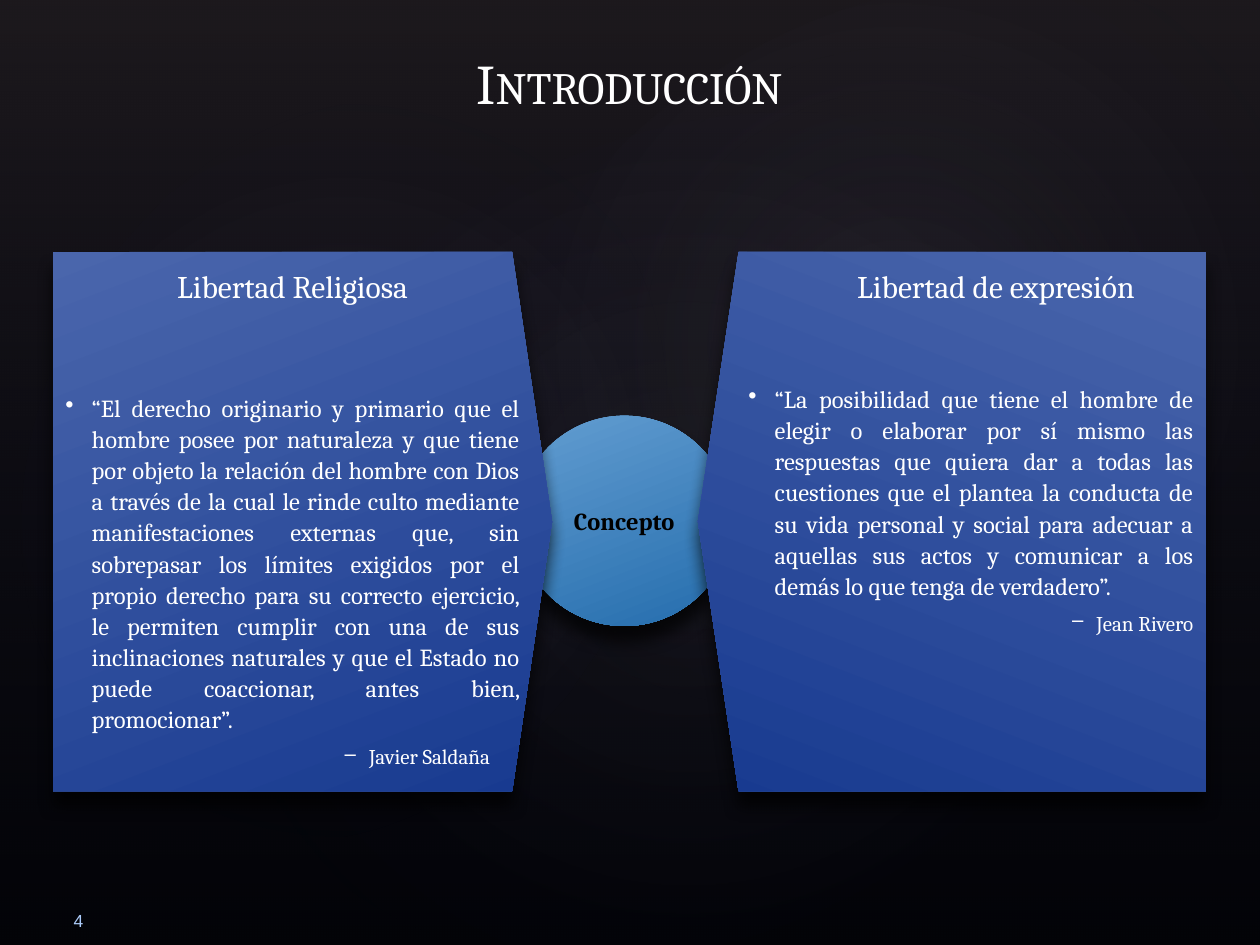
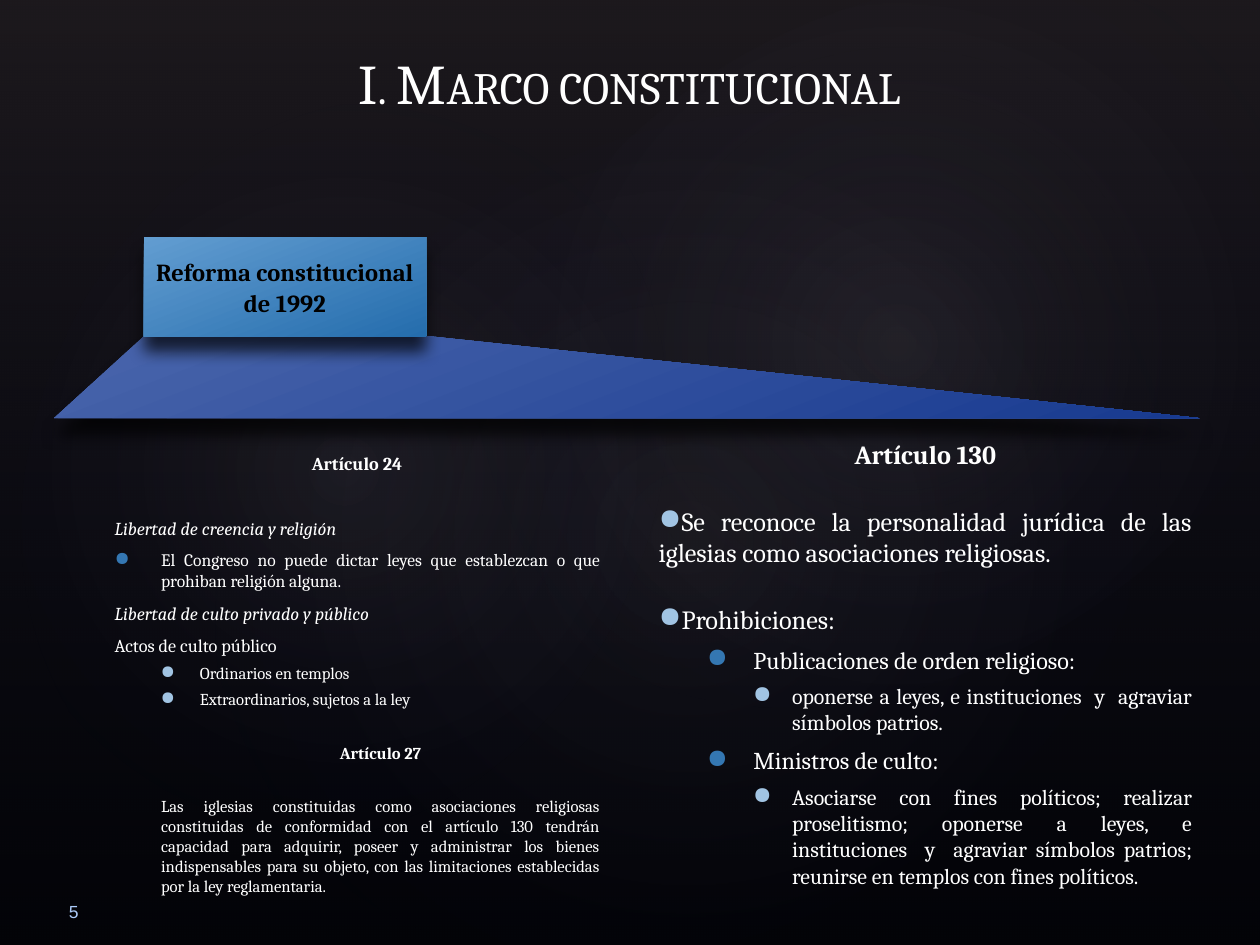
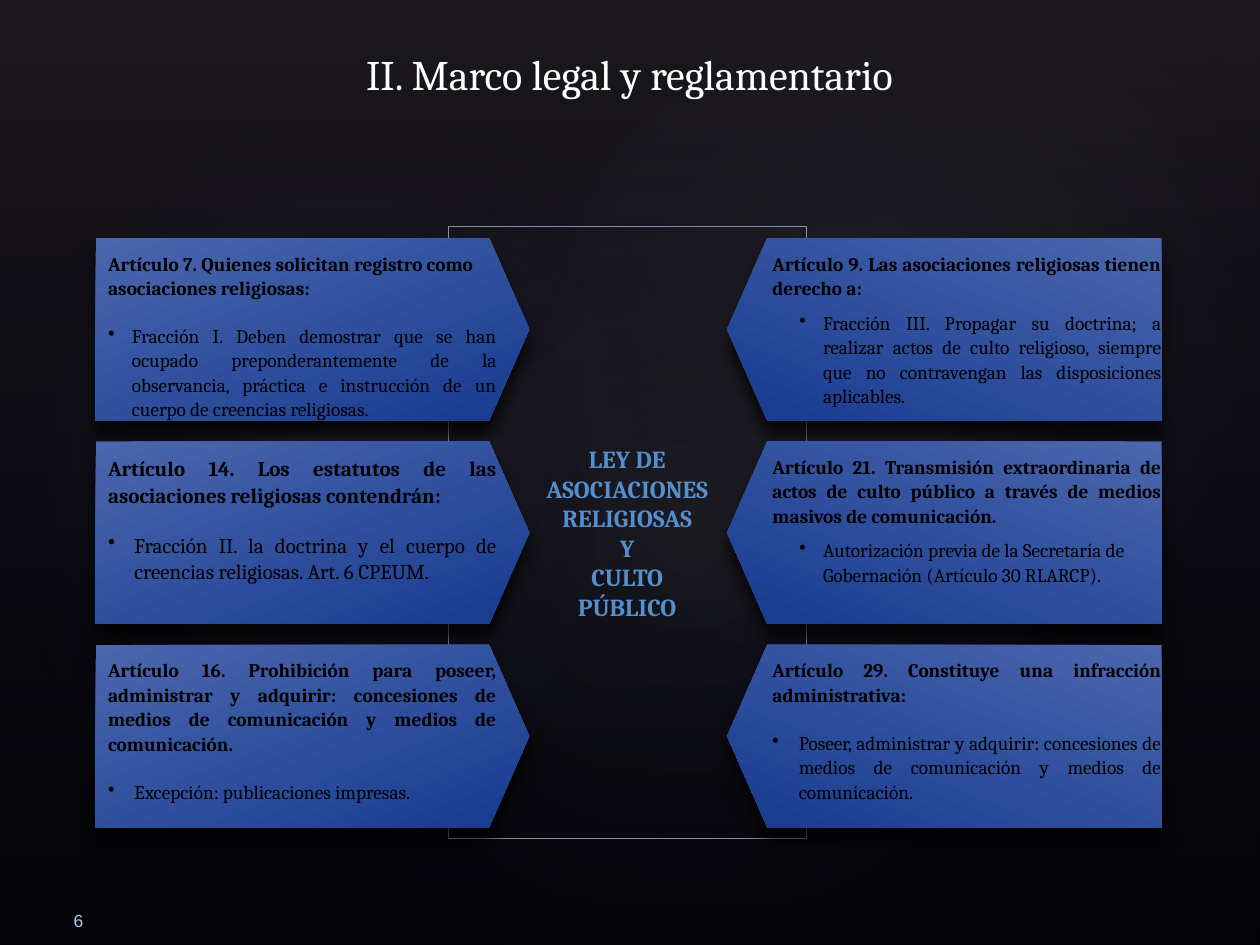
from pptx import Presentation
from pptx.dml.color import RGBColor
from pptx.enum.shapes import MSO_SHAPE
from pptx.enum.text import MSO_ANCHOR, PP_ALIGN
from pptx.oxml import parse_xml
from pptx.oxml.ns import nsdecls, qn
from pptx.util import Cm, Pt

# Shared colours, as hex strings
BLACK, WHITE = "000000", "FFFFFF"
PALE, MID, SKY = "A1C4E3", "3477B2", "548FCB"
NAVY = [(0, "4A66AC", 100), (100, "183A90", 100)]
BLUE = [(0, "629DD1", 100), (100, "256DAD", 100)]
VEIL = [(0, "504652", 36), (100, "242852", 10)]

ALIGN = {"l": PP_ALIGN.LEFT, "c": PP_ALIGN.CENTER,
         "r": PP_ALIGN.RIGHT, "j": PP_ALIGN.JUSTIFY}
TOP, MIDDLE, BOTTOM = MSO_ANCHOR.TOP, MSO_ANCHOR.MIDDLE, MSO_ANCHOR.BOTTOM

# Background glows: place, turn, opacity at the centre
GLOWS = [((3.81, 2.9, 20.12, 15.85), 328.7, 7),
         ((-0.76, 3.25, 15.39, 12.45), 294.3, 8),
         ((9.09, 0.33, 18.01, 13.21), 328.7, 8)]


def color(text):
    return RGBColor.from_string(text)


# Fill and shadow
def blend(shape, stops, angle=None):
    """Gradient fill: linear with an angle, round without one."""
    marks = "".join(
        f'<a:gs pos="{pos * 1000}"><a:srgbClr val="{tone}">'
        f'<a:alpha val="{alpha * 1000}"/></a:srgbClr></a:gs>'
        for pos, tone, alpha in stops)
    if angle is None:
        way = ('<a:path path="circle"><a:fillToRect l="50000" t="50000" '
               'r="50000" b="50000"/></a:path>')
    else:
        way = f'<a:lin ang="{angle * 60000}" scaled="0"/>'
    shape.fill.solid()
    props = shape.element.spPr
    props.replace(props.find(qn("a:solidFill")), parse_xml(
        f'<a:gradFill {nsdecls("a")} rotWithShape="1">'
        f'<a:gsLst>{marks}</a:gsLst>{way}</a:gradFill>'))


def plain(shape):
    shape.shadow.inherit = False
    shape.line.fill.background()
    return shape


def raised(shape, stops):
    """Slanted gradient with a soft shadow below."""
    plain(shape)
    blend(shape, stops, 69)
    shape.element.spPr.find(qn("a:effectLst")).append(parse_xml(
        f'<a:outerShdw {nsdecls("a")} blurRad="{Pt(9)}" dist="{Pt(9)}" '
        f'dir="5400000" rotWithShape="0"><a:srgbClr val="{BLACK}">'
        '<a:alpha val="70000"/></a:srgbClr></a:outerShdw>'))
    return shape


def draw(slide, kind, box):
    return slide.shapes.add_shape(kind, *map(Cm, box))


# Text
def style(para, size, tone=WHITE, bold=False, italic=False, align="l",
          before=0, line=None, left=0, hang=0, level=0, bullet=None,
          dot=None, font="Cambria", small=False):
    para.alignment = ALIGN[align]
    para.level = level
    para.space_before = Pt(before)
    if line:
        para.line_spacing = line
    props = para._p.get_or_add_pPr()
    props.set("marL", str(Cm(left)))
    props.set("indent", str(Cm(-hang)))
    if dot:
        props.append(parse_xml(f'<a:buClr {nsdecls("a")}>'
                               f'<a:srgbClr val="{dot}"/></a:buClr>'))
        props.append(parse_xml(f'<a:buSzPct {nsdecls("a")} val="110000"/>'))
    if bullet:
        props.append(parse_xml(f'<a:buChar {nsdecls("a")} char="{bullet}"/>'))
    for run in para.runs:
        run.font.name = font
        run.font.size = Pt(size)
        run.font.bold = bold
        run.font.italic = italic
        run.font.color.rgb = color(tone)
        if small:
            run._r.get_or_add_rPr().set("cap", "small")


def write(shape, rows, inset=(0.25, 0.13, 0.25, 0.13), anchor=TOP):
    """Each row is its text and its look."""
    frame = shape.text_frame
    frame.word_wrap = True
    frame.vertical_anchor = anchor
    (frame.margin_left, frame.margin_top,
     frame.margin_right, frame.margin_bottom) = map(Cm, inset)
    for num, (text, look) in enumerate(rows):
        para = frame.add_paragraph() if num else frame.paragraphs[0]
        para.text = text
        style(para, **look)


def label(slide, box, rows, **more):
    write(slide.shapes.add_textbox(*map(Cm, box)), rows, **more)


# Parts that the slides share
def start(deck, title, number, look, **foot):
    slide = deck.slides.add_slide(deck.slide_layouts[6])
    slide.background.fill.solid()
    slide.background.fill.fore_color.rgb = color(BLACK)
    veil = plain(draw(slide, MSO_SHAPE.RECTANGLE, (0, 0, 25.4, 19.05)))
    blend(veil, VEIL, 90)
    for box, turn, alpha in GLOWS:
        glow = plain(draw(slide, MSO_SHAPE.OVAL, box))
        glow.rotation = turn
        blend(glow, [(0, "C4BCC6", alpha), (58, "242852", 0)])
    label(slide, (1.09, 0.84, 23.2, 1.65), [(title, dict(look, align="c"))])
    side = "l" if foot else "r"
    label(slide, (1.14, 18.21, 0.79, 0.41),
          [(number, dict(size=10, tone="ACCBF9", font="Arial", align=side))],
          **foot)
    return slide


def plate(slide, box, tip, rows, inset, flip=False):
    """Pentagon that points right, or left when flipped."""
    shape = raised(draw(slide, MSO_SHAPE.PENTAGON, box), NAVY)
    shape.adjustments[0] = tip
    if flip:
        shape.element.spPr.find(qn("a:xfrm")).set("flipH", "1")
    write(shape, rows, inset)


CAPS = dict(size=32, small=True)
EVEN = (0.25, 0.25, 0.25, 0.25)


# Slide: introduction
def intro(deck):
    slide = start(deck, "Introducción", "4", CAPS)
    disc = raised(draw(slide, MSO_SHAPE.OVAL, (10.44, 8.38, 4.29, 4.24)), BLUE)
    write(disc, [("Concepto", dict(size=14, tone=BLACK, bold=True, align="c"))],
          EVEN, MIDDLE)

    head = dict(size=18, align="c", line=1.06)
    quote = dict(size=14, align="j", line=1.06, left=0.53, hang=0.53,
                 level=1, bullet="•")
    name = dict(size=12, line=1.06, before=4.8, hang=0.51, bullet="‒")
    plate(slide, (1.07, 5.08, 10.06, 10.87), 0.08, [
        ("Libertad Religiosa", dict(head, left=0.48, hang=0.48)),
        ("“El derecho originario y primario que el hombre posee por "
         "naturaleza y que tiene por objeto la relación del hombre con Dios "
         "a través de la cual le rinde culto mediante manifestaciones "
         "externas que, sin sobrepasar los límites exigidos por el propio "
         "derecho para su correcto ejercicio, le permiten cumplir con una de "
         "sus inclinaciones naturales y que el Estado no puede coaccionar, "
         "antes bien, promocionar”.", dict(quote, before=49.5)),
        ("Javier Saldaña", dict(name, left=6.12, level=6)),
    ], EVEN)
    plate(slide, (14.07, 5.08, 10.24, 10.87), 0.08, [
        ("Libertad de expresión", dict(head, left=1.98, hang=0.97)),
        ("“La posibilidad que tiene el hombre de elegir o elaborar por sí "
         "mismo las respuestas que quiera dar a todas las cuestiones que el "
         "plantea la conducta de su vida personal y social para adecuar a "
         "aquellas sus actos y comunicar a los demás lo que tenga de "
         "verdadero”.", dict(quote, before=44.5)),
        ("Jean Rivero", dict(name, left=1.04, level=2, align="r")),
    ], (0.61, 0.25, 0.25, 0.25), flip=True)


# Slide: constitution
def charter(deck):
    slide = start(deck, "I. Marco constitucional", "5", CAPS,
                  inset=(0.25, 0.13, 0.25, 0.03), anchor=BOTTOM)
    first = dict(size=15, align="j", before=20, bullet="●", dot=PALE)
    deep = dict(align="j", level=1, left=1.91, hang=0.94, before=6,
                bullet="●", dot=MID)
    last = dict(align="j", level=2, left=2.69, hang=0.79, bullet="●", dot=PALE)
    item, sub = dict(deep, size=13.8), dict(last, size=12.5, before=5)
    label(slide, (13.03, 8.71, 11.25, 8.81), [
        ("Artículo 130", dict(size=15, bold=True, align="c")),
        ("Se reconoce la personalidad jurídica de las iglesias como "
         "asociaciones religiosas.", first),
        ("Prohibiciones:", first),
        ("Publicaciones de orden religioso:", item),
        ("oponerse a leyes, e instituciones  y  agraviar símbolos patrios.",
         sub),
        ("Ministros de culto:", item),
        ("Asociarse con fines políticos; realizar proselitismo; oponerse a "
         "leyes, e instituciones  y  agraviar símbolos patrios; reunirse en "
         "templos con fines políticos.", sub),
    ])

    note = dict(size=10.4, level=1, left=0.97, before=6)
    rite = dict(last, size=9.5, before=3.8)
    land = dict(size=9.5, level=2, left=1.91, before=19)
    label(slide, (1.09, 8.99, 11.25, 8.15), [
        ("Artículo 24", dict(note, bold=True, align="c")),
        ("Libertad de creencia y religión",
         dict(note, italic=True, before=24.5)),
        ("El Congreso no puede dictar leyes que establezcan o que prohiban "
         "religión alguna.", dict(deep, size=10)),
        ("Libertad de culto privado y público", dict(note, italic=True)),
        ("Actos de culto público", dict(note, align="j")),
        ("Ordinarios en templos", rite),
        ("Extraordinarios, sujetos a la ley", rite),
        ("Artículo 27", dict(land, bold=True, align="c")),
        ("Las iglesias constituidas como asociaciones religiosas "
         "constituidas de conformidad con el artículo 130 tendrán capacidad "
         "para adquirir, poseer y administrar los bienes indispensables para "
         "su objeto, con las limitaciones establecidas por la ley "
         "reglamentaria.", dict(land, align="j")),
    ])

    # Ramp below the reform box
    pen = slide.shapes.build_freeform(Cm(1.09), Cm(8.43))
    pen.add_line_segments([(Cm(x), Cm(y)) for x, y in
                           [(2.9, 6.78), (8.66, 6.78), (24.18, 8.43)]])
    raised(pen.convert_to_shape(), NAVY)
    card = raised(draw(slide, MSO_SHAPE.RECTANGLE, (2.9, 4.78, 5.69, 2)), BLUE)
    write(card, [("Reforma constitucional de 1992",
                  dict(size=14, tone=BLACK, bold=True, align="c", line=1.06))],
          (0.2, 0.2, 0.2, 0.2), MIDDLE)


# Slide: law and rules
def law(deck):
    slide = start(deck, "II. Marco legal y reglamentario", "6", dict(size=24))
    frame = draw(slide, MSO_SHAPE.RECTANGLE, (9.04, 4.57, 7.21, 12.34))
    frame.shadow.inherit = False
    frame.fill.background()
    frame.line.color.rgb = color("7F8FA9")
    frame.line.width = Pt(0.5)
    words = ["LEY DE", "ASOCIACIONES", "RELIGIOSAS", "Y", "CULTO", "PÚBLICO"]
    look = dict(size=14, tone=SKY, bold=True, align="c")
    write(frame, [(word, look) for word in words], EVEN, MIDDLE)

    base = dict(size=11, tone=BLACK, align="j", line=1.06)
    head = dict(base, bold=True)
    near = dict(base, before=13.4, level=1, left=0.53, hang=0.53, bullet="•")
    far = dict(base, before=5.8, level=2, left=1.02, hang=0.48, bullet="•")
    left = [
        [("Artículo 7. Quienes solicitan registro como asociaciones "
          "religiosas:", dict(head, align="l")),
         ("Fracción I. Deben demostrar que se han ocupado preponderantemente "
          "de la observancia, práctica e instrucción de un cuerpo de "
          "creencias religiosas.", dict(near, level=0, left=0.48, hang=0.48))],
        [("Artículo 14. Los estatutos de las asociaciones religiosas "
          "contendrán:", dict(head, size=12)),
         ("Fracción II. la doctrina y el cuerpo de creencias religiosas. "
          "Art. 6 CPEUM.", dict(near, size=12))],
        [("Artículo 16. Prohibición para poseer, administrar y adquirir: "
          "concesiones de medios de comunicación y medios de comunicación.",
          head),
         ("Excepción: publicaciones impresas.", near)],
    ]
    right = [
        [("Artículo 9. Las asociaciones religiosas tienen derecho a:", head),
         ("Fracción III. Propagar su doctrina; a realizar actos de culto "
          "religioso, siempre que no contravengan las disposiciones "
          "aplicables.", far)],
        [("Artículo 21. Transmisión extraordinaria de actos de culto público "
          "a través de medios masivos de comunicación.", head),
         ("Autorización previa de la Secretaría de Gobernación (Artículo 30 "
          "RLARCP).", dict(far, align="l"))],
        [("Artículo 29. Constituye una infracción administrativa:", head),
         ("Poseer, administrar y adquirir: concesiones de medios de "
          "comunicación y medios de comunicación.", near)],
    ]
    for row, pair in enumerate(zip(left, right)):
        top = 4.8 + 4.1 * row
        plate(slide, (1.93, top, 8.74, 3.68), 0.22, pair[0], EVEN)
        plate(slide, (14.66, top, 8.76, 3.68), 0.22, pair[1],
              (0.51, 0.25, 0, 0.25), flip=True)


def main():
    deck = Presentation()
    deck.slide_width, deck.slide_height = Cm(25.4), Cm(19.05)
    intro(deck)
    charter(deck)
    law(deck)
    deck.save("out.pptx")


if __name__ == "__main__":
    main()
